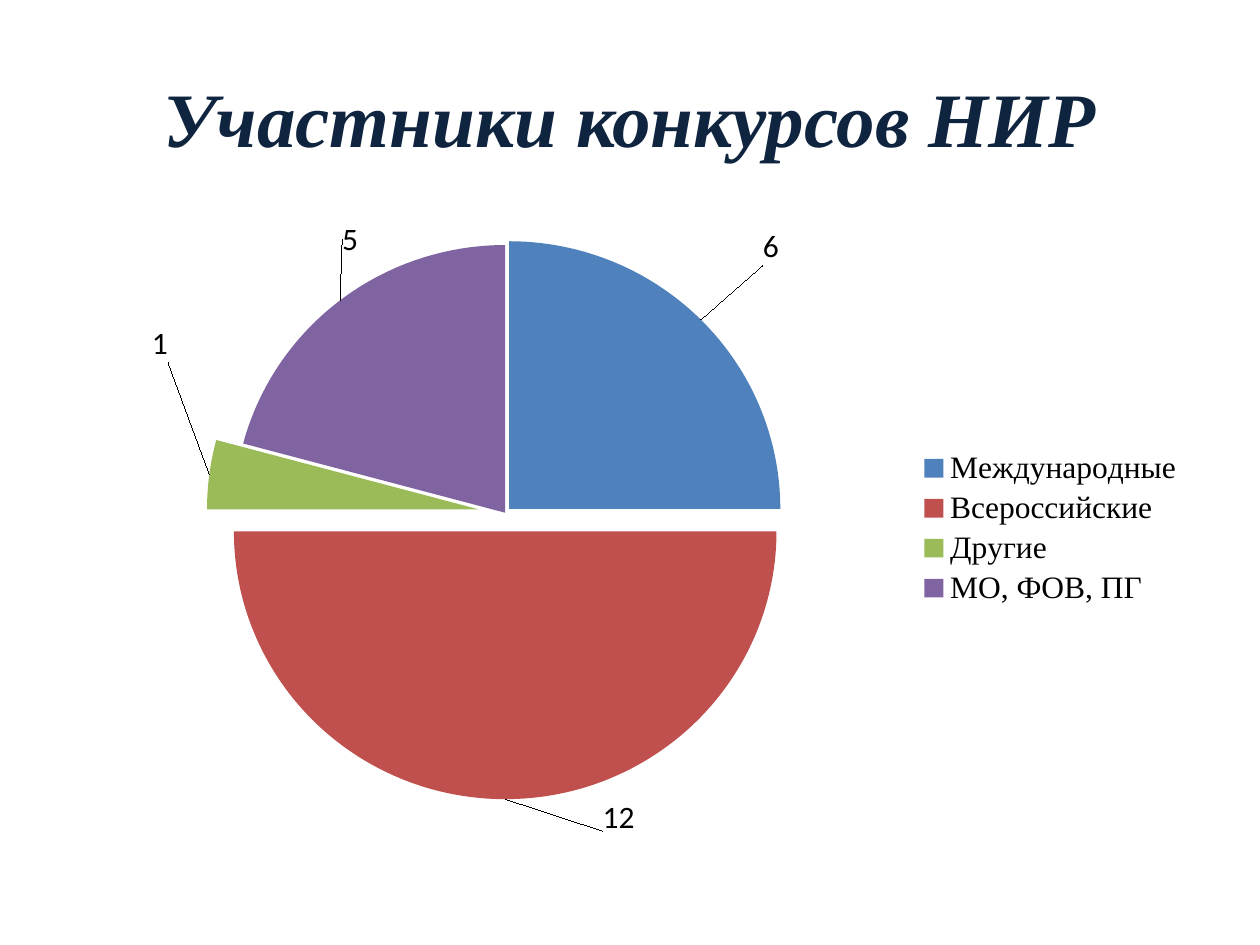
import pptx
import pptx.chart.data
import pptx.dml.color
import pptx.enum.chart
import pptx.enum.text
import pptx.oxml
import pptx.oxml.ns
import pptx.util

Pt = pptx.util.Pt
COLORS = {
    "title": "0F243E", "text": "000000", "international": "4F81BD",
    "national": "C0504D", "other": "9BBB59", "regional": "8064A2",
}
CONTESTS = [
    ("Международные", 6, "international", 2, (0.05, -0.08)),
    ("Всероссийские", 12, "national", 7, (0.1, 0.04)),
    ("Другие", 1, "other", 10, (-0.03, -0.18)),
    ("МО, ФОВ, ПГ", 5, "regional", 0, (0.02, -0.09)),
]


def chart_xml(content):
    """Parse a chart element given without its namespace declaration."""
    head, tail = content.split(">", 1) if not content.endswith("/>") else (content[:-2], None)
    namespace = pptx.oxml.ns.nsdecls("c")
    closing = "/>" if tail is None else ">" + tail
    return pptx.oxml.parse_xml(f"{head} {namespace}{closing}")


def manual_layout(**settings):
    """Return a manual chart layout with the given settings."""
    items = "".join(f'<c:{key} val="{value}"/>' for key, value in settings.items())
    return chart_xml(f"<c:layout><c:manualLayout>{items}</c:manualLayout></c:layout>")


class SlideBuilder:
    """Hold the style and the current slide."""

    heading_font = "Times New Roman"
    body_font = "Calibri"

    def __init__(self, presentation):
        """Add a title-only slide."""
        self.slide = presentation.slides.add_slide(presentation.slide_layouts[5])

    def style(self, font, name, size, color):
        """Apply a typeface, size and colour."""
        font.name, font.size = name, Pt(size)
        font.color.rgb = pptx.dml.color.RGBColor.from_string(COLORS[color])

    def title(self, text, left, top, width, height):
        """Place and format the slide title."""
        heading = self.slide.shapes.title
        heading.left, heading.top = Pt(left), Pt(top)
        heading.width, heading.height = Pt(width), Pt(height)
        heading.text_frame.text = text
        heading.text_frame.vertical_anchor = pptx.enum.text.MSO_ANCHOR.MIDDLE
        paragraph = heading.text_frame.paragraphs[0]
        paragraph.alignment = pptx.enum.text.PP_ALIGN.CENTER
        self.style(paragraph.font, self.heading_font, 44, "title")
        paragraph.font.bold = paragraph.font.italic = True

    def pie(self, contests, left, top, width, height):
        """Add an exploded pie with placed labels and a legend."""
        data = pptx.chart.data.CategoryChartData()
        data.categories = [contest[0] for contest in contests]
        data.add_series("Series 1", [contest[1] for contest in contests])
        chart = self.slide.shapes.add_chart(
            pptx.enum.chart.XL_CHART_TYPE.PIE,
            Pt(left), Pt(top), Pt(width), Pt(height), data,
        ).chart
        self.style(chart.font, self.body_font, 18, "text")
        chart.has_title = False
        chart.has_legend = True
        chart.legend.position = pptx.enum.chart.XL_LEGEND_POSITION.RIGHT
        chart.legend.include_in_layout = False
        self.style(chart.legend.font, self.heading_font, 18, "text")

        plot = chart.plots[0]
        plot.vary_by_categories = True
        participants = plot.series[0]
        participants.data_labels.show_value = True
        self.style(participants.data_labels.font, self.body_font, 18, "text")
        for index, (_, _, color, explosion, offset) in enumerate(contests):
            self.slice(participants.points[index], color)
            marker = chart.element.xpath(f".//c:dPt[c:idx/@val='{index}']/c:spPr")[0]
            marker.addprevious(chart_xml(f'<c:explosion val="{explosion}"/>'))
            label = chart.element.xpath(f".//c:dLbl/c:idx[@val='{index}']")[0]
            label.addnext(manual_layout(x=offset[0], y=offset[1]))

        area = chart.element.xpath(".//c:plotArea")[0]
        for layout in area.xpath("./c:layout"):
            area.remove(layout)
        area.insert(0, manual_layout(
            layoutTarget="inner", xMode="edge", yMode="edge",
            x=0.15, y=0.04, w=0.48, h=0.87,
        ))

    def slice(self, point, color):
        """Colour one slice and format its label."""
        point.format.fill.solid()
        point.format.fill.fore_color.rgb = pptx.dml.color.RGBColor.from_string(COLORS[color])
        self.style(point.data_label.font, self.body_font, 18, "text")
        point.data_label.position = pptx.enum.chart.XL_LABEL_POSITION.OUTSIDE_END


def main():
    """Build and save the slide."""
    presentation = pptx.Presentation()
    presentation.slide_width, presentation.slide_height = Pt(720), Pt(540)
    builder = SlideBuilder(presentation)
    builder.title("Участники конкурсов НИР", 36, 21.6, 648, 90)
    builder.pie(CONTESTS, 36, 126, 648, 356.4)
    presentation.save("out.pptx")


if __name__ == "__main__":
    main()
